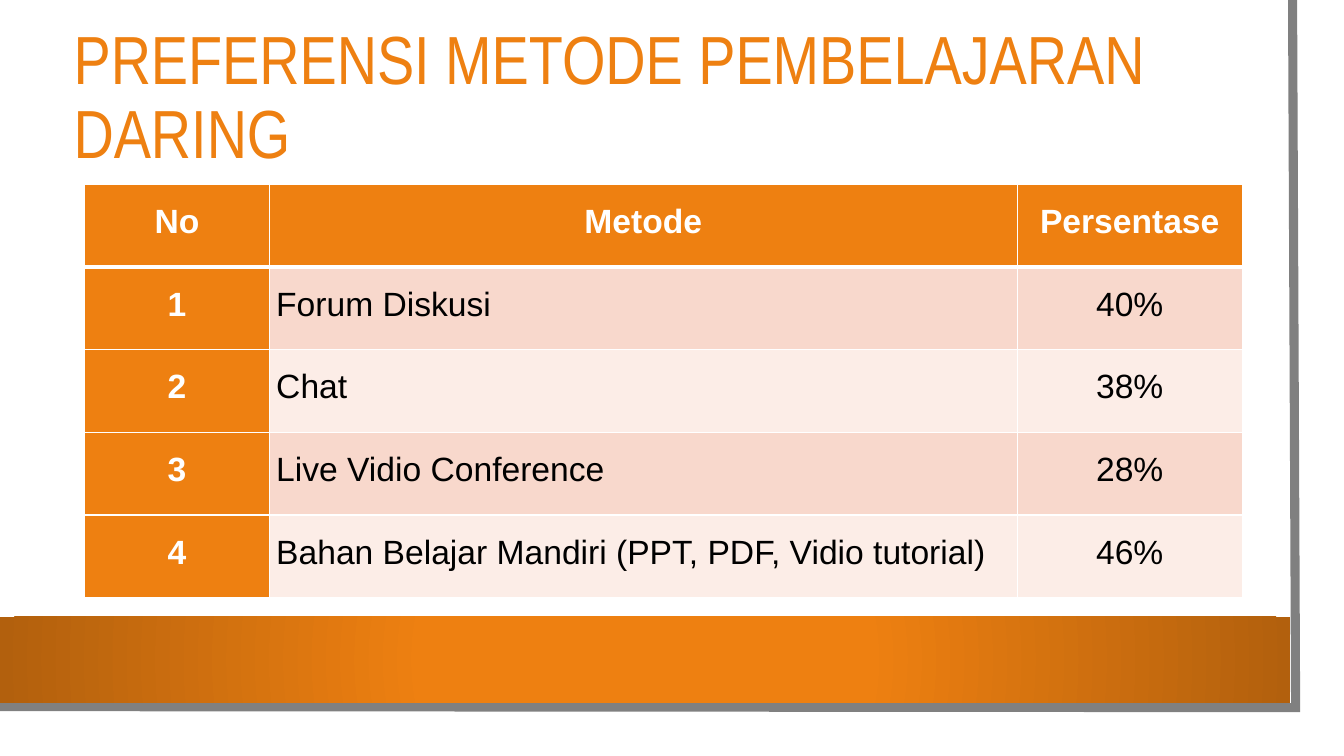
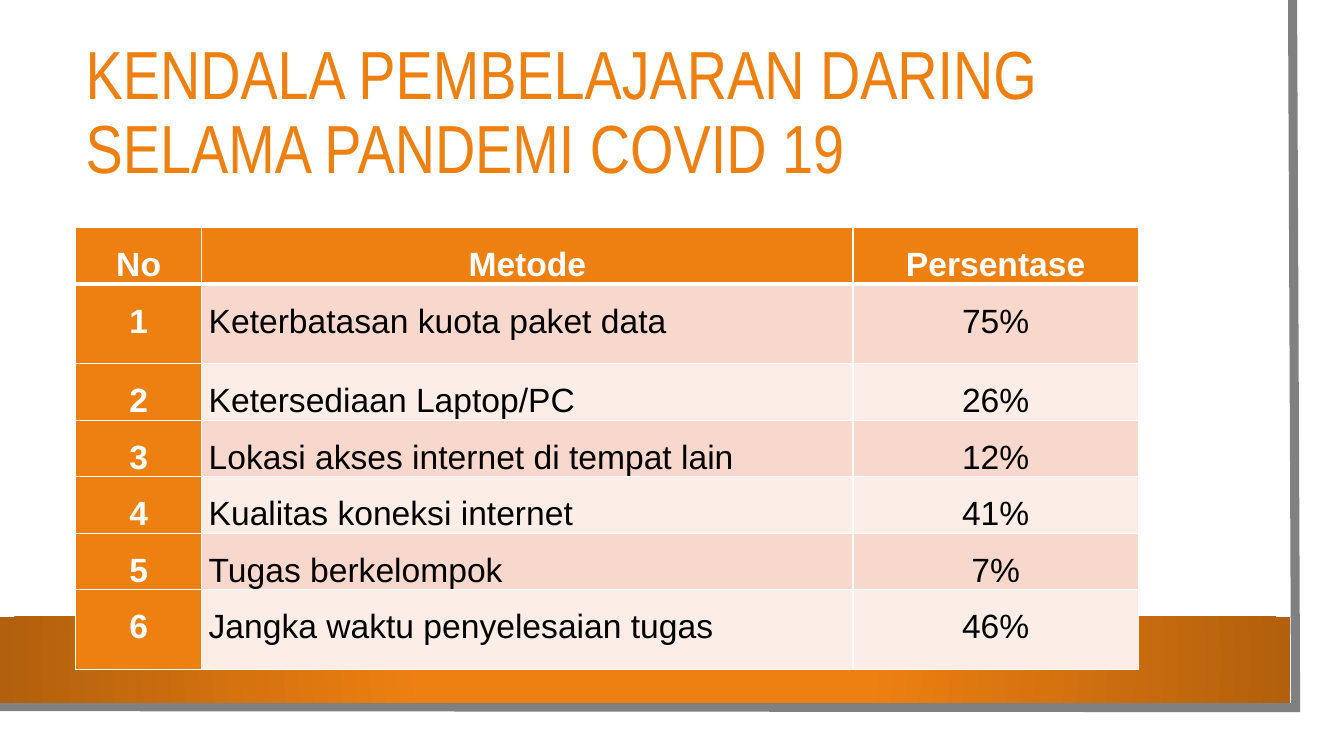
from lxml import etree
from pptx import Presentation
from pptx.dml.color import RGBColor
from pptx.enum.shapes import MSO_SHAPE
from pptx.enum.text import MSO_ANCHOR, MSO_AUTO_SIZE, PP_ALIGN
from pptx.oxml.ns import qn
from pptx.util import Inches, Pt

RECTANGLE = MSO_SHAPE.RECTANGLE
LEFT, CENTER = PP_ALIGN.LEFT, PP_ALIGN.CENTER
MIDDLE, TOP = MSO_ANCHOR.MIDDLE, MSO_ANCHOR.TOP
NO_AUTOFIT = MSO_AUTO_SIZE.NONE

COLORS = {name: RGBColor.from_string(value) for name, value in {
    "orange": "EE8011",
    "dark_orange": "B2600D",
    "odd_row": "F8D8CC",
    "even_row": "FCEDE7",
    "gray": "808080",
    "white": "FFFFFF",
    "black": "000000",
}.items()}
TITLE_FONT, TABLE_FONT = "Arial Narrow", "Arial"
HEADER = ("No", "Metode", "Persentase")

SLIDES = [
    {
        "title": "PREFERENSI METODE PEMBELAJARAN DARING",
        "title_box": (0.63, 0.35, 11.37, 1.27),
        "table_at": (0.84, 1.83),
        "columns": (1.83, 7.42, 2.23),
        "rows": (0.82,) * 5,
        "data": [
            ("Forum Diskusi", "40%"),
            ("Chat", "38%"),
            ("Live Vidio Conference", "28%"),
            ("Bahan Belajar Mandiri (PPT, PDF, Vidio tutorial)", "46%"),
        ],
    },
    {
        "title": "KENDALA PEMBELAJARAN DARING SELAMA PANDEMI COVID 19",
        "title_box": (0.75, 0.75, 11.37, 0.77),
        "table_at": (0.75, 2.26),
        "columns": (1.25, 6.46, 2.83),
        "rows": (0.56, 0.79, 0.56, 0.56, 0.56, 0.56, 0.79),
        "data": [
            ("Keterbatasan kuota paket data", "75%"),
            ("Ketersediaan Laptop/PC", "26%"),
            ("Lokasi akses internet di tempat lain", "12%"),
            ("Kualitas koneksi internet", "41%"),
            ("Tugas berkelompok", "7%"),
            ("Jangka waktu penyelesaian tugas", "46%"),
        ],
    },
]


def add_text(paragraph, text, font_name, size, color, bold=False):
    span = paragraph.add_run()
    span.text = text
    span.font.name = font_name
    span.font.size = Pt(size)
    span.font.bold = bold
    span.font.color.rgb = COLORS[color]


def add_borders(cell, top, bottom):
    """Draw white cell borders; top and bottom are widths in points."""
    properties = cell._tc.get_or_add_tcPr()
    for side, width in (("L", 1), ("R", 1), ("T", top), ("B", bottom)):
        line = etree.SubElement(properties, qn(f"a:ln{side}"), w=str(Pt(width)))
        fill = etree.SubElement(line, qn("a:solidFill"))
        etree.SubElement(fill, qn("a:srgbClr"), val=str(COLORS["white"]))


deck = Presentation()
deck.slide_width, deck.slide_height = Inches(13.33), Inches(7.5)
layout = deck.slide_layouts.get_by_name("Title Only")
pages = [deck.slides.add_slide(layout) for _ in SLIDES]

# Shared backdrop: drawn once, then moved to the layout
shapes = pages[0].shapes
sheet = shapes.add_shape(RECTANGLE, 0, 0, Inches(13.1), Inches(7.27))
sheet.fill.solid()
sheet.fill.fore_color.rgb = COLORS["white"]
sheet.line.fill.background()

outline = shapes.build_freeform(Inches(12.82), 0)
outline.add_line_segments(
    [(Inches(12.85), Inches(7.02)), (Inches(-0.03), Inches(7.01))], close=False)
edge = outline.convert_to_shape()
edge.fill.background()
edge.line.color.rgb = COLORS["gray"]
edge.line.width = Pt(6.5)
etree.SubElement(edge.line._get_or_add_ln(), qn("a:miter"), lim="800000")

band = shapes.add_shape(RECTANGLE, 0, Inches(6.12), Inches(12.8), Inches(0.85))
band.line.fill.background()
band.fill.gradient()
for stop, position, color in zip(
        band.fill.gradient_stops, (0.34, 1), ("orange", "dark_orange")):
    stop.position = position
    stop.color.rgb = COLORS[color]
gradient = band.element.spPr.find(qn("a:gradFill"))
linear = gradient.find(qn("a:lin"))
radial = etree.Element(qn("a:path"), path="circle")
etree.SubElement(radial, qn("a:fillToRect"), l="50000", t="50000", r="50000", b="50000")
gradient.replace(linear, radial)

for number, shape in enumerate((sheet, edge, band), start=101):
    shape.shadow.inherit = False
    shape.element.nvSpPr.cNvPr.set("id", str(number))
    layout.shapes.element.append(shape.element)

for page, content in zip(pages, SLIDES):
    title = page.shapes.title
    title.left, title.top, title.width, title.height = map(Inches, content["title_box"])
    frame = title.text_frame
    frame.word_wrap = True
    frame.auto_size = NO_AUTOFIT
    frame.vertical_anchor = MIDDLE
    para = frame.paragraphs[0]
    para.alignment = LEFT
    para.line_spacing = 0.9
    add_text(para, content["title"], TITLE_FONT, 48.6, "orange")

    columns, rows = content["columns"], content["rows"]
    left, top = content["table_at"]
    table = page.shapes.add_table(
        len(rows), len(columns), Inches(left), Inches(top),
        Inches(sum(columns)), Inches(sum(rows))).table
    table.horz_banding = False
    for column, width in zip(table.columns, columns):
        column.width = Inches(width)
    for row, height in zip(table.rows, rows):
        row.height = Inches(height)

    records = [HEADER] + [
        (str(number), *record) for number, record in enumerate(content["data"], start=1)]
    for row_index, record in enumerate(records):
        for column_index, text in enumerate(record):
            is_heading = row_index == 0 or column_index == 0
            stripe = "odd_row" if row_index % 2 else "even_row"
            cell = table.cell(row_index, column_index)
            add_borders(cell, top=3 if row_index == 1 else 1,
                        bottom=3 if row_index == 0 else 1)
            cell.fill.solid()
            cell.fill.fore_color.rgb = COLORS["orange" if is_heading else stripe]
            cell.margin_left = cell.margin_right = Inches(0.07)
            cell.margin_top = cell.margin_bottom = 0
            cell.vertical_anchor = TOP
            para = cell.text_frame.paragraphs[0]
            para.alignment = LEFT if column_index == 1 and not is_heading else CENTER
            para.line_spacing = 1.5
            add_text(para, text, TABLE_FONT, 24,
                     "white" if is_heading else "black", bold=is_heading)

deck.save("out.pptx")
